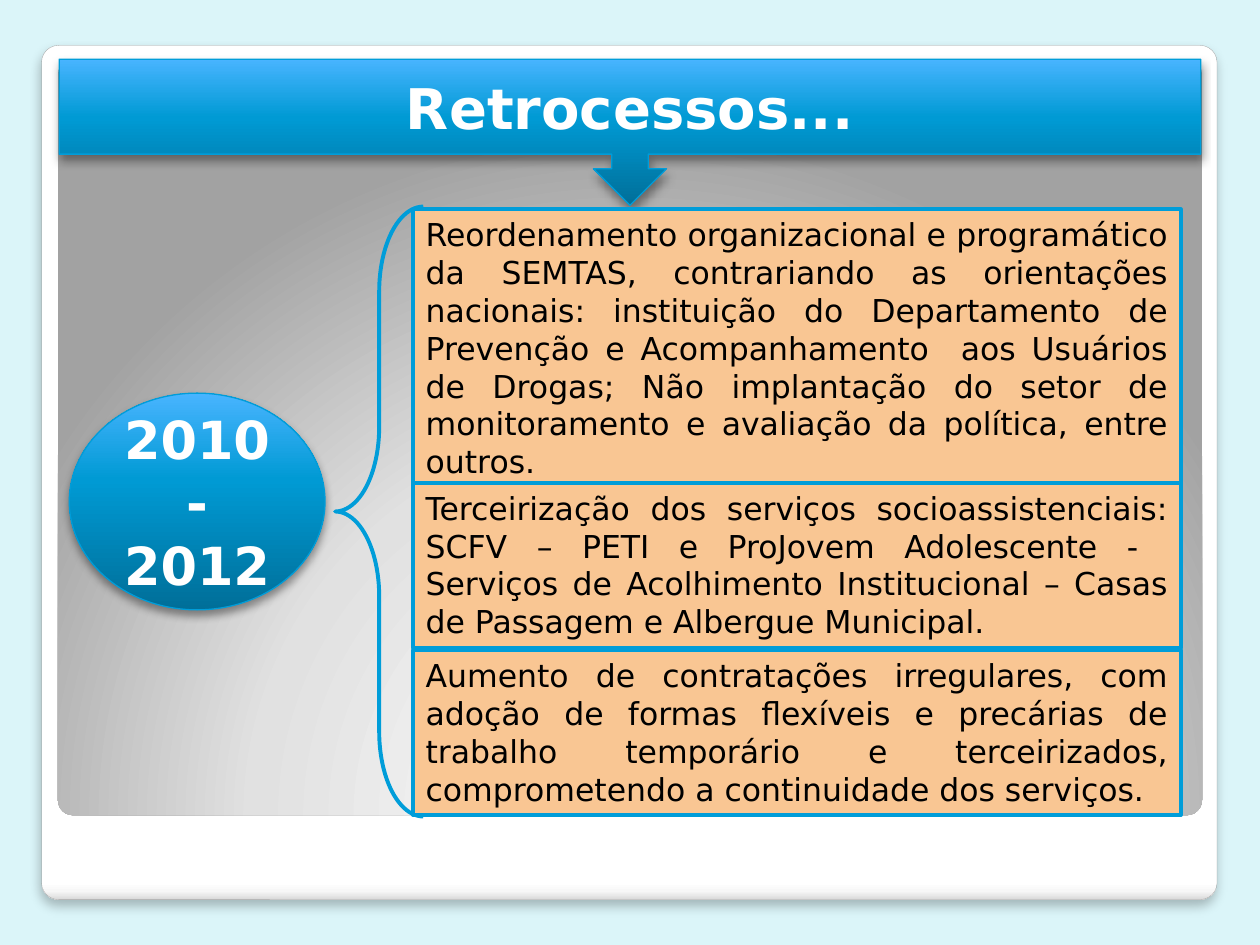
from lxml import etree
from pptx import Presentation
from pptx.dml.color import RGBColor as RGB
from pptx.enum.shapes import MSO_SHAPE as Geo
from pptx.enum.text import MSO_ANCHOR as Anchor, MSO_AUTO_SIZE as Fit, PP_ALIGN as Align
from pptx.oxml.ns import qn
from pptx.util import Inches, Pt

FONT = "DejaVu Sans"
HUE = {"back": "DBF5F9", "blue": "009DD9", "peach": "F9C693", "edge": "A4A4A4",
       "white": "FFFFFF", "black": "000000"}
GLOSS = [(0, "006F99"), (60, "009AD4"), (100, "48B4FF")]
SHEET = [(0, "FFFFFF"), (98, "FFFFFF"), (99, "F7F7F7"), (100, "DADADA")]
PANEL = [(0, "FFFFFF"), (55, "E1E1E1"), (100, "A2A2A2")]
FOCUS = {"l": 50, "t": 175, "r": 50, "b": -75}

HEADS = [
    (Geo.DOWN_ARROW_CALLOUT, (0.47, 0.47, 9.06, 1.16), "Retrocessos...", 32),
    (Geo.OVAL, (0.55, 3.12, 2.03, 1.72), "2010- 2012", 30),
]
LEFT, WIDTH = 3.28, 6.09
NOTES = [
    (1.66, 2.22, "Reordenamento organizacional e programático da SEMTAS, contrariando as "
     "orientações nacionais: instituição do Departamento de Prevenção e Acompanhamento  aos "
     "Usuários de Drogas; Não implantação do setor de monitoramento e avaliação da política, "
     "entre outros."),
    (3.83, 1.31, "Terceirização dos serviços socioassistenciais: SCFV – PETI e ProJovem "
     "Adolescente -  Serviços de Acolhimento Institucional – Casas de Passagem e Albergue "
     "Municipal. "),
    (5.16, 1.31, "Aumento de contratações irregulares, com adoção de formas flexíveis e "
     "precárias de trabalho temporário e terceirizados, comprometendo a continuidade dos "
     "serviços."),
]


def node(top, tag, **vals):
    return etree.SubElement(top, qn("a:" + tag), {k: str(v) for k, v in vals.items()})


def draw(geo, box, line=None, width=0.75, adj=()):
    shape = deck.shapes.add_shape(geo, *map(Inches, box))
    shape.shadow.inherit = False
    shape.fill.background()
    for i, val in enumerate(adj):
        shape.adjustments[i] = val
    if line:
        shape.line.color.rgb = RGB.from_string(HUE[line])
        shape.line.width = Pt(width)
    else:
        shape.line.fill.background()
    return shape


def blend(shape, stops, angle=None):
    props = shape.element.spPr
    grad = etree.Element(qn("a:gradFill"), rotWithShape="1")
    row = node(grad, "gsLst")
    for pos, hue in stops:
        node(node(row, "gs", pos=pos * 1000), "srgbClr", val=hue)
    if angle is None:
        ring = node(grad, "path", path="circle")
        node(ring, "fillToRect", **{k: v * 1000 for k, v in FOCUS.items()})
    else:
        node(grad, "lin", ang=angle * 60000, scaled=0)
    props.replace(props.find(qn("a:noFill")), grad)


def shade(shape, alpha, blur, dist):
    glow = node(shape.element.spPr.find(qn("a:effectLst")), "outerShdw", blurRad=Pt(blur),
                dist=Pt(dist), dir=90 * 60000, algn="t", rotWithShape=0)
    node(node(glow, "srgbClr", val=HUE["black"]), "alpha", val=alpha * 1000)


def write(shape, text, size, hue, align, anchor, bold=False):
    frame = shape.text_frame
    frame.word_wrap = True
    frame.vertical_anchor = anchor
    para = frame.paragraphs[0]
    para.alignment = align
    run = para.add_run()
    run.text = text
    font = run.font
    font.name, font.size, font.bold = FONT, Pt(size), bold
    font.color.rgb = RGB.from_string(HUE[hue])


show = Presentation()
show.slide_width, show.slide_height = Inches(10), Inches(7.5)
deck = show.slides.add_slide(show.slide_layouts[6])
deck.background.fill.solid()
deck.background.fill.fore_color.rgb = RGB.from_string(HUE["back"])

sheet = draw(Geo.ROUNDED_RECTANGLE, (0.33, 0.36, 9.33, 6.78), "edge", 0.16, [0.02])
blend(sheet, SHEET, 90)
shade(sheet, 25, 6, 4)
panel = draw(Geo.ROUNDED_RECTANGLE, (0.46, 0.47, 9.08, 6), adj=[0.02])
blend(panel, PANEL)

for geo, box, text, size in HEADS:
    head = draw(geo, box, "blue")
    blend(head, GLOSS, 270)
    shade(head, 40, 5.2, 3)
    write(head, text, size, "white", Align.CENTER, Anchor.MIDDLE, True)

draw(Geo.LEFT_BRACE, (2.66, 1.64, 0.7, 4.84), "blue", 2.25, [0.96, 0.5])

for top, high, text in NOTES:
    note = draw(Geo.RECTANGLE, (LEFT, top, WIDTH, high), "blue", 2.25)
    note.fill.solid()
    note.fill.fore_color.rgb = RGB.from_string(HUE["peach"])
    write(note, text, 18, "black", Align.JUSTIFY, Anchor.TOP)
    note.text_frame.auto_size = Fit.SHAPE_TO_FIT_TEXT

show.save("out.pptx")
